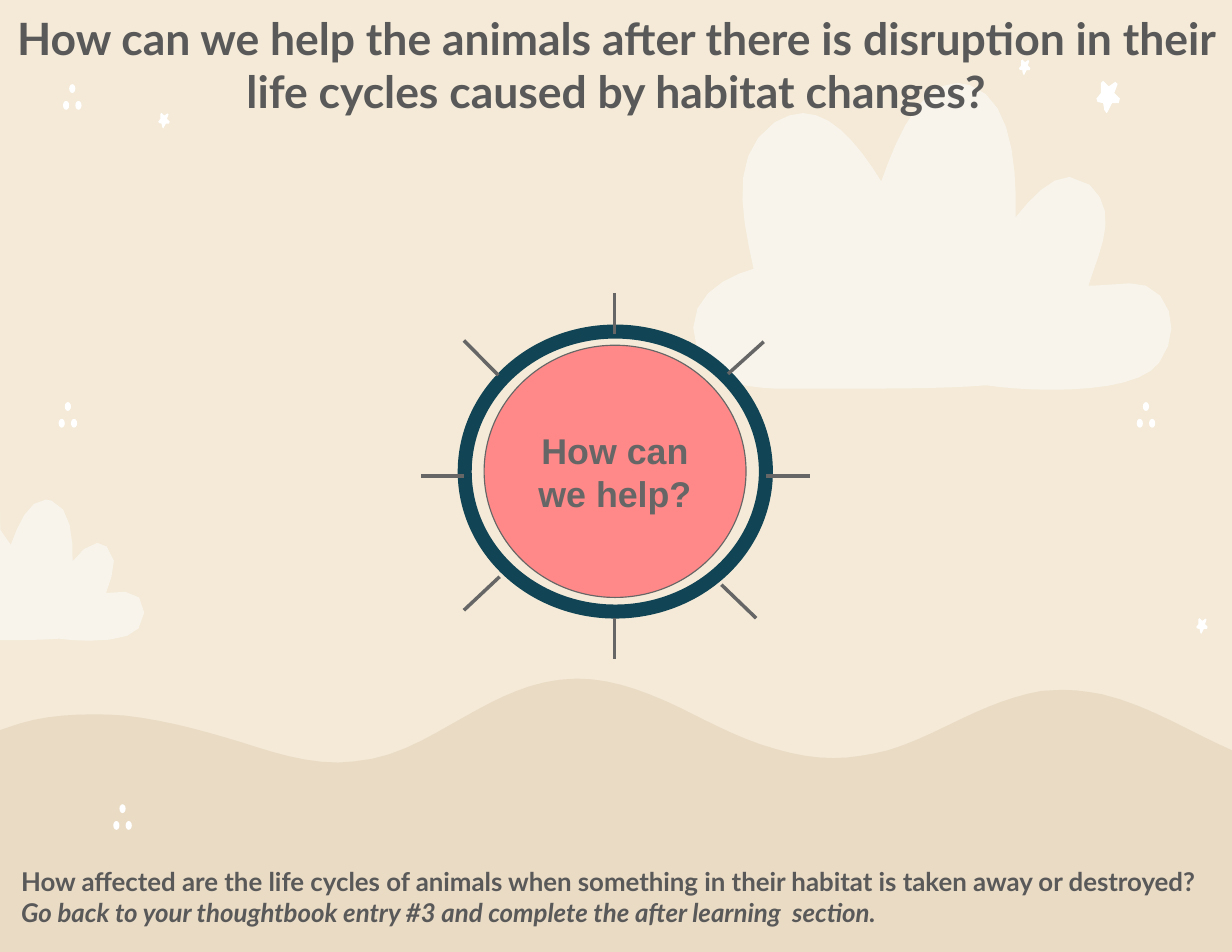
from dataclasses import dataclass
from math import dist

from lxml.etree import SubElement
from pptx import Presentation
from pptx.dml.color import RGBColor
from pptx.enum.shapes import MSO_CONNECTOR, MSO_SHAPE
from pptx.enum.text import MSO_ANCHOR, MSO_AUTO_SIZE, PP_ALIGN
from pptx.oxml.ns import qn
from pptx.util import Cm, Pt

COLORS = {"sky": "F4EAD7", "cloud": "F8F4EC", "hill": "EADBC5", "white": "FFFFFF",
          "text": "595959", "ring": "114454", "disc": "FF8888", "gray": "666666"}
UNIT = 0.0254  # cm per outline unit
STEP = 0.35  # cm per line segment of a curve
MAX_STEPS = 7


@dataclass(frozen=True)
class Outline:
    """A start point and cubic curves (two controls and an end each)."""
    start: tuple[int, int]
    curves: list[tuple[int, ...]]


@dataclass(frozen=True)
class Placed:
    """An outline's top left corner in cm and its scale."""
    x: float
    y: float
    scale: float = 1.0


@dataclass(frozen=True)
class Style:
    size: float
    font: str
    color: str
    align: PP_ALIGN
    inset: float


CLOUD = Outline((249, 0), [
    (215, 0, 194, 51, 181, 88), (163, 59, 139, 27, 111, 27),
    (103, 27, 95, 30, 86, 35), (44, 64, 57, 120, 67, 166),
    (42, 173, 0, 193, 17, 240), (29, 270, 66, 272, 87, 273),
    (104, 273, 123, 273, 144, 273), (189, 273, 240, 273, 275, 270),
    (287, 272, 309, 274, 333, 274), (372, 274, 415, 269, 429, 250),
    (443, 231, 444, 207, 430, 190), (422, 181, 413, 179, 403, 179),
    (393, 179, 382, 181, 372, 181), (370, 181, 368, 181, 366, 181),
    (375, 151, 395, 116, 367, 91), (361, 86, 355, 84, 349, 84),
    (331, 84, 314, 104, 301, 120), (302, 76, 298, 14, 260, 2),
    (256, 1, 253, 0, 249, 0)])
HILLS = Outline((515, 0), [
    (510, 0, 505, 1, 500, 1), (467, 5, 440, 20, 415, 34),
    (386, 50, 355, 71, 316, 74), (311, 75, 307, 75, 302, 75),
    (272, 75, 244, 66, 216, 57), (183, 47, 148, 37, 111, 33),
    (101, 32, 92, 32, 82, 32), (60, 32, 38, 34, 18, 40),
    (11, 42, 6, 44, 0, 46), (0, 46, 0, 244, 0, 244),
    (0, 244, 1100, 244, 1100, 244), (1100, 244, 1100, 64, 1100, 64),
    (1096, 62, 1091, 60, 1087, 58), (1055, 43, 1022, 23, 984, 14),
    (973, 12, 961, 10, 949, 10), (942, 10, 936, 10, 930, 11),
    (913, 14, 898, 19, 883, 25), (853, 37, 826, 54, 793, 64),
    (777, 68, 760, 71, 744, 71), (727, 71, 710, 68, 693, 63),
    (660, 54, 632, 38, 603, 24), (577, 12, 547, 0, 515, 0)])
STAR = Outline((7, 0), [
    (6, 0, 5, 1, 5, 2), (5, 5, 5, 8, 5, 11), (4, 13, 3, 14, 1, 16),
    (0, 17, 1, 19, 2, 19), (4, 19, 5, 20, 7, 20), (7, 22, 8, 24, 8, 26),
    (8, 28, 9, 29, 10, 29), (11, 29, 11, 28, 11, 28), (13, 25, 14, 23, 15, 20),
    (17, 20, 19, 20, 21, 20), (22, 20, 23, 18, 22, 16), (20, 15, 19, 13, 17, 11),
    (18, 9, 19, 6, 20, 3), (20, 2, 19, 1, 18, 1), (16, 2, 14, 4, 12, 5),
    (11, 3, 9, 2, 7, 0)])

CLOUDS = [Placed(15.39, 1.88), Placed(-1.87, 11.33, 0.46)]
STARS = [Placed(24.84, 1.83), Placed(3.58, 2.56, 0.48),
         Placed(23.1, 1.35, 0.48), Placed(27.12, 14.02, 0.48)]
DOT_TRIOS = [(1.54, 9.12), (25.99, 9.12), (1.64, 1.91), (2.78, 18.24)]
SPOKES = [(13.94, 7.57, 13.94, 6.65), (13.94, 14.94, 13.94, 14.02),
          (18.36, 10.8, 17.37, 10.8), (10.52, 10.8, 9.55, 10.8),
          (16.51, 8.48, 17.32, 7.75), (10.52, 13.84, 11.33, 13.08),
          (11.3, 8.51, 10.52, 7.72), (17.15, 14.02, 16.36, 13.26)]


def rgb(name: str) -> RGBColor:
    return RGBColor.from_string(COLORS[name])


def add_outline(s, outline: Outline, at: Placed, color: str) -> None:
    k = UNIT * at.scale

    def place(x: float, y: float) -> tuple[int, int]:
        return Cm(max(0, at.x + x * k)), Cm(at.y + y * k)  # cut at the slide's left edge

    points, last = [], outline.start
    for x1, y1, x2, y2, x3, y3 in outline.curves:
        straight = last == (x1, y1) and (x2, y2) == (x3, y3)
        length = dist(last, (x3, y3)) * k
        n = 1 if straight else min(MAX_STEPS, max(1, round(length / STEP)))
        for i in range(1, n + 1):
            t = i / n
            w = ((1 - t) ** 3, 3 * t * (1 - t) ** 2, 3 * t * t * (1 - t), t ** 3)
            points.append(place(sum(a * b for a, b in zip(w, (last[0], x1, x2, x3))),
                                sum(a * b for a, b in zip(w, (last[1], y1, y2, y3)))))
        last = (x3, y3)
    fb = s.shapes.build_freeform(*place(*outline.start))
    fb.add_line_segments(points)
    paint(fb.convert_to_shape(), color)


def paint(sp, fill: str | None, line: str | None = None, width: float = 0) -> None:
    sp.shadow.inherit = False
    if fill:
        sp.fill.solid()
        sp.fill.fore_color.rgb = rgb(fill)
    else:
        sp.fill.background()
    if line:
        sp.line.color.rgb = rgb(line)
        sp.line.width = Pt(width)
    else:
        sp.line.fill.background()


def add_oval(s, x: float, y: float, w: float, h: float):
    return s.shapes.add_shape(MSO_SHAPE.OVAL, Cm(x), Cm(y), Cm(w), Cm(h))


def add_spoke(s, x1: float, y1: float, x2: float, y2: float) -> None:
    c = s.shapes.add_connector(MSO_CONNECTOR.STRAIGHT, Cm(x1), Cm(y1), Cm(x2), Cm(y2))
    c.line.color.rgb = rgb("gray")
    c.line.width = Pt(2.25)
    SubElement(c._element.spPr, qn("a:effectLst"))


def write(sp, text: str, style: Style, anchor: MSO_ANCHOR = MSO_ANCHOR.TOP) -> None:
    tf = sp.text_frame
    tf.text = text
    tf.word_wrap, tf.auto_size, tf.vertical_anchor = True, MSO_AUTO_SIZE.NONE, anchor
    tf.margin_left = tf.margin_right = tf.margin_top = tf.margin_bottom = Cm(style.inset)
    for p in tf.paragraphs:
        p.alignment, p.space_before = style.align, Pt(0)
        for r in p.runs:
            f = r.font
            f.name, f.size, f.bold = style.font, Pt(style.size), True
            f.color.rgb = rgb(style.color)


def move(sp, x: float, y: float, w: float, h: float) -> None:
    sp.left, sp.top, sp.width, sp.height = Cm(x), Cm(y), Cm(w), Cm(h)
    sp._element.getparent().append(sp._element)  # bring to front


def main() -> None:
    prs = Presentation()
    prs.slide_width, prs.slide_height = Cm(27.94), Cm(21.59)
    s = prs.slides.add_slide(prs.slide_layouts[0])
    s.background.fill.solid()
    s.background.fill.fore_color.rgb = rgb("sky")
    title, task = s.placeholders

    # Scenery
    for at in CLOUDS:
        add_outline(s, CLOUD, at, "cloud")
    add_outline(s, HILLS, Placed(0, 15.39), "hill")
    for at in STARS:
        add_outline(s, STAR, at, "white")
    for x, y in DOT_TRIOS:
        for dx, dy in ((0, 0), (-0.14, 0.38), (0.14, 0.38)):
            paint(add_oval(s, x + dx - 0.07, y + dy, 0.14, 0.2), "white")

    # Heading and closing task
    move(task, 0.18, 19.33, 27.94, 2.08)
    write(task, "How affected are the life cycles of animals when something in their habitat "
          "is taken away or destroyed?\nGo back to your thoughtbook entry #3 and complete "
          "the after learning  section.", Style(16.6, "Lato", "text", PP_ALIGN.LEFT, 0.3))
    task.text_frame.paragraphs[1].runs[0].font.italic = True
    move(title, 0, 0, 27.94, 2.95)
    write(title, "How can we help the animals after there is disruption in their life cycles "
          "caused by habitat changes?", Style(28.6, "Lato", "text", PP_ALIGN.CENTER, 0.25))

    # Central question with its ring and spokes
    paint(add_oval(s, 10.54, 7.52, 6.83, 6.35), None, "ring", 9)
    disc = add_oval(s, 10.98, 7.83, 5.94, 5.72)
    paint(disc, "disc", "gray", 0.75)
    write(disc, "How can we help?", Style(23, "Arial", "gray", PP_ALIGN.CENTER, 0.3),
          MSO_ANCHOR.MIDDLE)
    for spoke in SPOKES:
        add_spoke(s, *spoke)

    prs.save("out.pptx")


if __name__ == "__main__":
    main()
